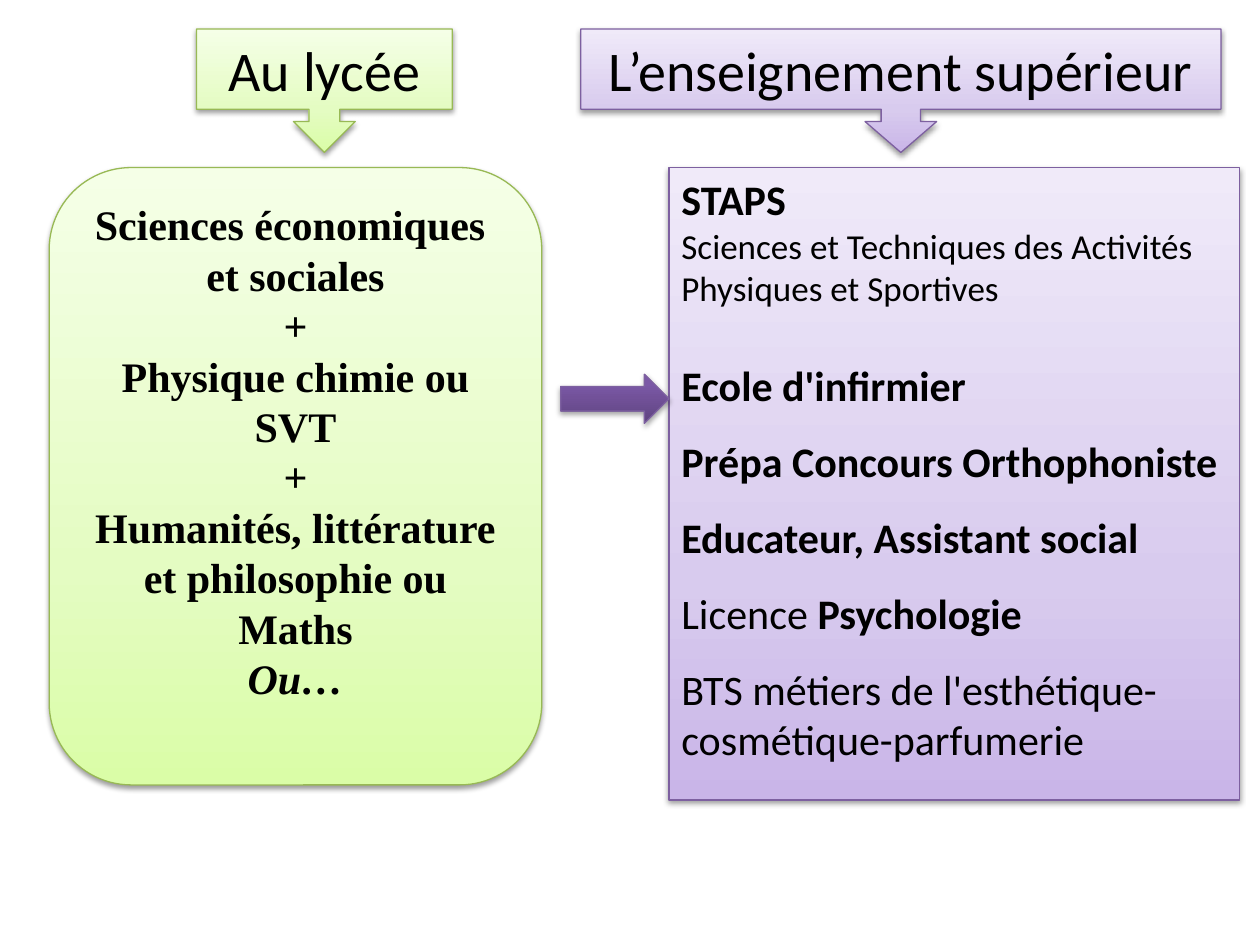
from copy import deepcopy

from lxml.etree import SubElement
from pptx import Presentation
from pptx.dml.color import RGBColor
from pptx.enum.shapes import MSO_SHAPE
from pptx.enum.text import MSO_ANCHOR, PP_ALIGN
from pptx.oxml.ns import qn
from pptx.util import Inches, Pt

BLACK = RGBColor(0x00, 0x00, 0x00)
GREEN_LINE = RGBColor(0x98, 0xB9, 0x55)
PURPLE_LINE = RGBColor(0x7D, 0x60, 0xA0)
GREEN = [(0, RGBColor(0xDA, 0xFD, 0xA7)), (0.35, RGBColor(0xE4, 0xFC, 0xC2)),
         (1, RGBColor(0xF5, 0xFF, 0xE7))]
LILAC = [(0, RGBColor(0xC9, 0xB5, 0xE8)), (0.35, RGBColor(0xD8, 0xCB, 0xEE)),
         (1, RGBColor(0xF0, 0xEA, 0xF9))]
VIOLET = [(0, RGBColor(0x5F, 0x44, 0x80)), (0.8, RGBColor(0x7B, 0x58, 0xA6)),
          (1, RGBColor(0x7C, 0x57, 0xA8))]

SUBJECTS = ["Sciences économiques ", "et sociales", "+", "Physique chimie ou", "SVT", "+",
            "Humanités, littérature et philosophie ou Maths", "Ou…"]
STUDIES = [
    (0, 24, [("STAPS", True)]),
    (0, 20, [("Sciences et Techniques des Activités Physiques et Sportives", False)]),
    (29.3, 24, [("Ecole d'infirmier", True)]),
    (14.6, 24, [("Prépa Concours Orthophoniste", True)]),
    (14.6, 24, [("Educateur, Assistant social", True)]),
    (14.6, 24, [("Licence ", False), ("Psychologie", True)]),
    (14.6, 24, [("BTS métiers de l'esthétique-cosmétique-parfumerie", False)]),
]


class OrientationSlide:
    def __init__(self, slide):
        self.slide = slide
        self.body_font = "Calibri"
        self.subject_font = "Times New Roman"

    def block(self, preset, box, stops, edge, opacity=38, adjustments=()):
        shape = self.slide.shapes.add_shape(preset, *map(Inches, box))
        for index, value in enumerate(adjustments):
            shape.adjustments[index] = value
        shape.fill.gradient()
        shape.fill.gradient_angle = 90
        stop_list = shape._element.spPr.find(qn("a:gradFill")).find(qn("a:gsLst"))
        stop_list.append(deepcopy(stop_list[-1]))
        for stop, (position, color) in zip(shape.fill.gradient_stops, stops):
            stop.position = position
            stop.color.rgb = color
        shape.line.color.rgb = edge
        shape.line.width = Pt(0.75)
        self.drop_shadow(shape, opacity)
        shape.text_frame.word_wrap = True
        return shape

    def drop_shadow(self, shape, opacity):
        shape.shadow.inherit = False
        effects = shape._element.spPr.find(qn("a:effectLst"))
        shadow = SubElement(effects, qn("a:outerShdw"), blurRad=str(Pt(3.1)),
                            dist=str(Pt(1.6)), dir="5400000", rotWithShape="0")
        color = SubElement(shadow, qn("a:srgbClr"), val=str(BLACK))
        SubElement(color, qn("a:alpha"), val=str(opacity * 1000))

    def paragraph(self, frame, first, align):
        paragraph = frame.paragraphs[0] if first else frame.add_paragraph()
        paragraph.alignment = align
        return paragraph

    def run(self, paragraph, text, size, font, bold=False, italic=False):
        run = paragraph.add_run()
        run.text = text
        run.font.size = Pt(size)
        run.font.name = font
        run.font.bold = bold
        run.font.italic = italic
        run.font.color.rgb = BLACK

    def heading(self, text, box, stops, edge, adjustments=()):
        callout = self.block(MSO_SHAPE.DOWN_ARROW_CALLOUT, box, stops, edge,
                             adjustments=adjustments)
        callout.text_frame.vertical_anchor = MSO_ANCHOR.MIDDLE
        title = self.paragraph(callout.text_frame, True, PP_ALIGN.CENTER)
        self.run(title, text, 32, self.body_font)

    def subject_panel(self, subjects, box):
        frame = self.block(MSO_SHAPE.ROUNDED_RECTANGLE, box, GREEN, GREEN_LINE).text_frame
        frame.vertical_anchor = MSO_ANCHOR.MIDDLE
        frame.margin_bottom = Inches(0.45)
        for index, subject in enumerate(subjects):
            line = self.paragraph(frame, index == 0, PP_ALIGN.CENTER)
            line.line_spacing = Pt(28.8)
            self.run(line, subject, 24, self.subject_font, True, subject == subjects[-1])

    def study_panel(self, studies, box):
        frame = self.block(MSO_SHAPE.RECTANGLE, box, LILAC, PURPLE_LINE).text_frame
        frame.vertical_anchor = MSO_ANCHOR.TOP
        for index, (gap, size, parts) in enumerate(studies):
            line = self.paragraph(frame, index == 0, PP_ALIGN.LEFT)
            line.space_before = Pt(gap)
            for text, bold in parts:
                self.run(line, text, size, self.body_font, bold)

    def arrow(self, box):
        self.block(MSO_SHAPE.RIGHT_ARROW, box, VIOLET, PURPLE_LINE, opacity=35)


def main():
    presentation = Presentation()
    presentation.slide_width = Inches(10)
    presentation.slide_height = Inches(7.5)
    page = OrientationSlide(presentation.slides.add_slide(presentation.slide_layouts[6]))
    page.subject_panel(SUBJECTS, (0.39, 1.33, 3.91, 4.9))
    page.heading("Au lycée", (1.56, 0.23, 2.03, 0.98), GREEN, GREEN_LINE)
    page.heading("L’enseignement supérieur", (4.61, 0.23, 5.08, 0.98), LILAC, PURPLE_LINE,
                 (0.32, 0.29, 0.25, 0.65))
    page.study_panel(STUDIES, (5.31, 1.33, 4.53, 5.02))
    page.arrow((4.45, 2.97, 0.86, 0.39))
    presentation.save("out.pptx")


if __name__ == "__main__":
    main()
